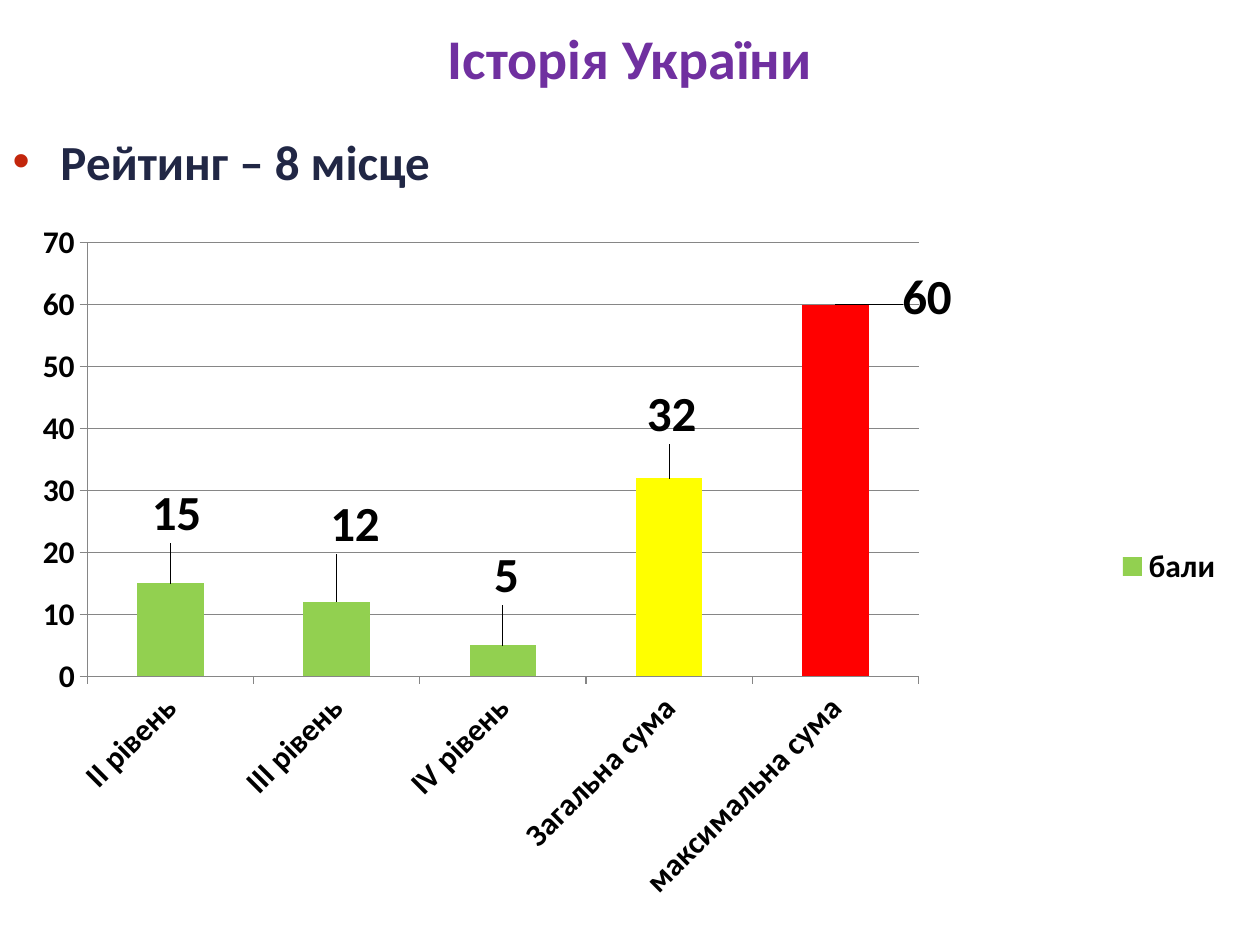
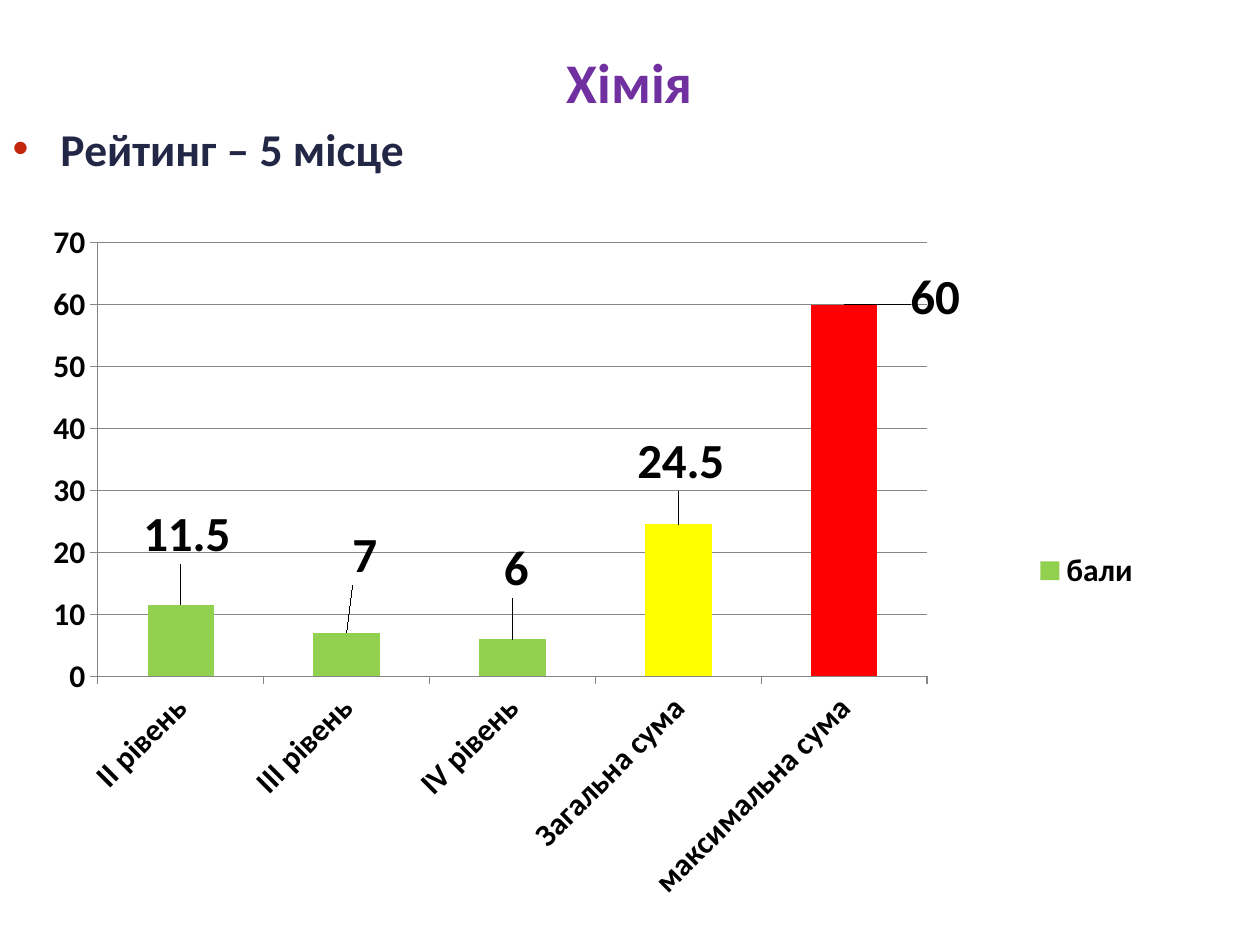
from lxml import etree
from pptx import Presentation
from pptx.chart.data import CategoryChartData
from pptx.dml.color import RGBColor
from pptx.enum.chart import (XL_CHART_TYPE as CT, XL_LABEL_POSITION as LP,
                             XL_LEGEND_POSITION as LEG, XL_TICK_MARK as TICK)
from pptx.enum.text import MSO_ANCHOR, MSO_AUTO_SIZE, PP_ALIGN
from pptx.oxml.ns import qn
from pptx.util import Inches, Pt

C = {"title": "7030A0", "text": "212745", "bullet": "C3260C", "label": "000000",
     "level": "92D050", "total": "FFFF00", "max": "FF0000", "axis": "868686",
     "back": "FFFFFF"}
FONT = "Calibri"
W, H = Inches(10), Inches(7.5)

CATS = ["II рівень", "III рівень", "IV рівень", "Загальна сума", "максимальна сума"]
BARS = ["level", "level", "level", "total", "max"]
# Shift of each value label from the top of its bar, as shares of the chart
SHIFTS = [(0.005, -0.05), (0.015, -0.06), (0.003, -0.05), (0.002, -0.04), (0.075, 0.04)]

# Boxes are left, top, width, height as shares of the slide
SLIDES = [
    dict(title="Історія України", title_box=(0.05, 0.01, 0.9, 0.1),
         rating="Рейтинг – 8 місце", size=28, rating_box=(0, 0.132, 0.616, 0.129),
         vals=[15, 12, 5, 32, 60], chart_box=(0.012, 0.227, 0.969, 0.745),
         plot=dict(x=0.059, y=0.04, w=0.681, h=0.616), legend=None),
    dict(title="Хімія", title_box=(0.05, 0.04, 0.9, 0.092),
         rating="Рейтинг – 5 місце", size=26, rating_box=(0, 0.121, 0.616, 0.084),
         vals=[11.5, 7, 6, 24.5, 60], chart_box=(0.02, 0.227, 0.961, 0.745),
         plot=dict(x=0.06, y=0.04, w=0.685, h=0.616), legend=dict(x=0.83, y=0.47)),
]


def style(font, size, color):
    font.name, font.size, font.bold = FONT, Pt(size), True
    font.color.rgb = RGBColor.from_string(C[color])


def set_layout(parent, index, shares, inner=False):
    for old in parent.findall(qn("c:layout")):
        parent.remove(old)
    layout = etree.Element(qn("c:layout"))
    manual = etree.SubElement(layout, qn("c:manualLayout"))
    items = {"layoutTarget": "inner", "xMode": "edge", "yMode": "edge"} if inner else {}
    if parent.tag == qn("c:legend"):
        items = {"xMode": "edge", "yMode": "edge"}
    for name, val in {**items, **shares}.items():
        etree.SubElement(manual, qn("c:" + name), val=str(val))
    parent.insert(index, layout)


prs = Presentation()
prs.slide_width, prs.slide_height = W, H

for d in SLIDES:
    s = prs.slides.add_slide(prs.slide_layouts[0])
    s.background.fill.solid()
    s.background.fill.fore_color.rgb = RGBColor.from_string(C["back"])

    # Title and rating line
    title, rating = s.placeholders
    for sp, key, size, color, align, anchor in (
            (title, "title", 32, "title", PP_ALIGN.CENTER, MSO_ANCHOR.MIDDLE),
            (rating, "rating", d["size"], "text", PP_ALIGN.LEFT, MSO_ANCHOR.TOP)):
        x, y, w, h = d[key + "_box"]
        sp.left, sp.top = int(x * W), int(y * H)
        sp.width, sp.height = int(w * W), int(h * H)
        tf = sp.text_frame
        tf.word_wrap, tf.auto_size = True, MSO_AUTO_SIZE.NONE
        tf.vertical_anchor = anchor
        p = tf.paragraphs[0]
        p.alignment, p.space_before = align, Pt(0)
        r = p.add_run()
        r.text = d[key]
        style(r.font, size, color)

    # Bullet of the rating line
    pPr = rating.text_frame.paragraphs[0]._p.get_or_add_pPr()
    pPr.set("marL", str(Inches(0.38)))
    pPr.set("indent", str(-Inches(0.38)))
    clr = etree.SubElement(pPr, qn("a:buClr"))
    etree.SubElement(clr, qn("a:srgbClr"), val=C["bullet"])
    etree.SubElement(pPr, qn("a:buFont"), typeface="Arial")
    etree.SubElement(pPr, qn("a:buChar"), char="•")

    # Score chart
    data = CategoryChartData()
    data.categories = CATS
    data.add_series("бали", d["vals"])
    x, y, w, h = d["chart_box"]
    chart = s.shapes.add_chart(CT.COLUMN_CLUSTERED, int(x * W), int(y * H),
                               int(w * W), int(h * H), data).chart
    style(chart.font, 18, "label")
    chart.has_title = False
    set_layout(chart._chartSpace.chart.plotArea, 0, d["plot"], inner=True)

    # Axes
    cat, val = chart.category_axis, chart.value_axis
    val.minimum_scale, val.maximum_scale, val.major_unit = 0, 70, 10
    val.has_major_gridlines = True
    for axis in (cat, val):
        axis.major_tick_mark, axis.minor_tick_mark = TICK.OUTSIDE, TICK.NONE
        style(axis.tick_labels.font, 18, "label")
    for line in (cat.format.line, val.format.line, val.major_gridlines.format.line):
        line.color.rgb = RGBColor.from_string(C["axis"])
        line.width = Pt(0.75)
    cat._element.find(qn("c:txPr")).find(qn("a:bodyPr")).set("rot", "-2700000")

    # Legend
    chart.has_legend = True
    chart.legend.position = LEG.RIGHT
    chart.legend.include_in_layout = False
    style(chart.legend.font, 18, "label")
    if d["legend"]:
        set_layout(chart.legend._element, 1, d["legend"])

    # Bars and their value labels
    plot = chart.plots[0]
    plot.gap_width, plot.vary_by_categories = 150, False
    ser = plot.series[0]
    ser.format.fill.solid()
    ser.format.fill.fore_color.rgb = RGBColor.from_string(C["level"])
    ser.data_labels.show_value = True
    style(ser.data_labels.font, 28, "label")
    for i, color in enumerate(BARS):
        point = ser.points[i]
        if color != "level":
            point.format.fill.solid()
            point.format.fill.fore_color.rgb = RGBColor.from_string(C[color])
        style(point.data_label.font, 28, "label")
        point.data_label.position = LP.OUTSIDE_END
    for label, (dx, dy) in zip(ser._element.iter(qn("c:dLbl")), SHIFTS):
        set_layout(label, 1, dict(x=dx, y=dy))

prs.save("out.pptx")
